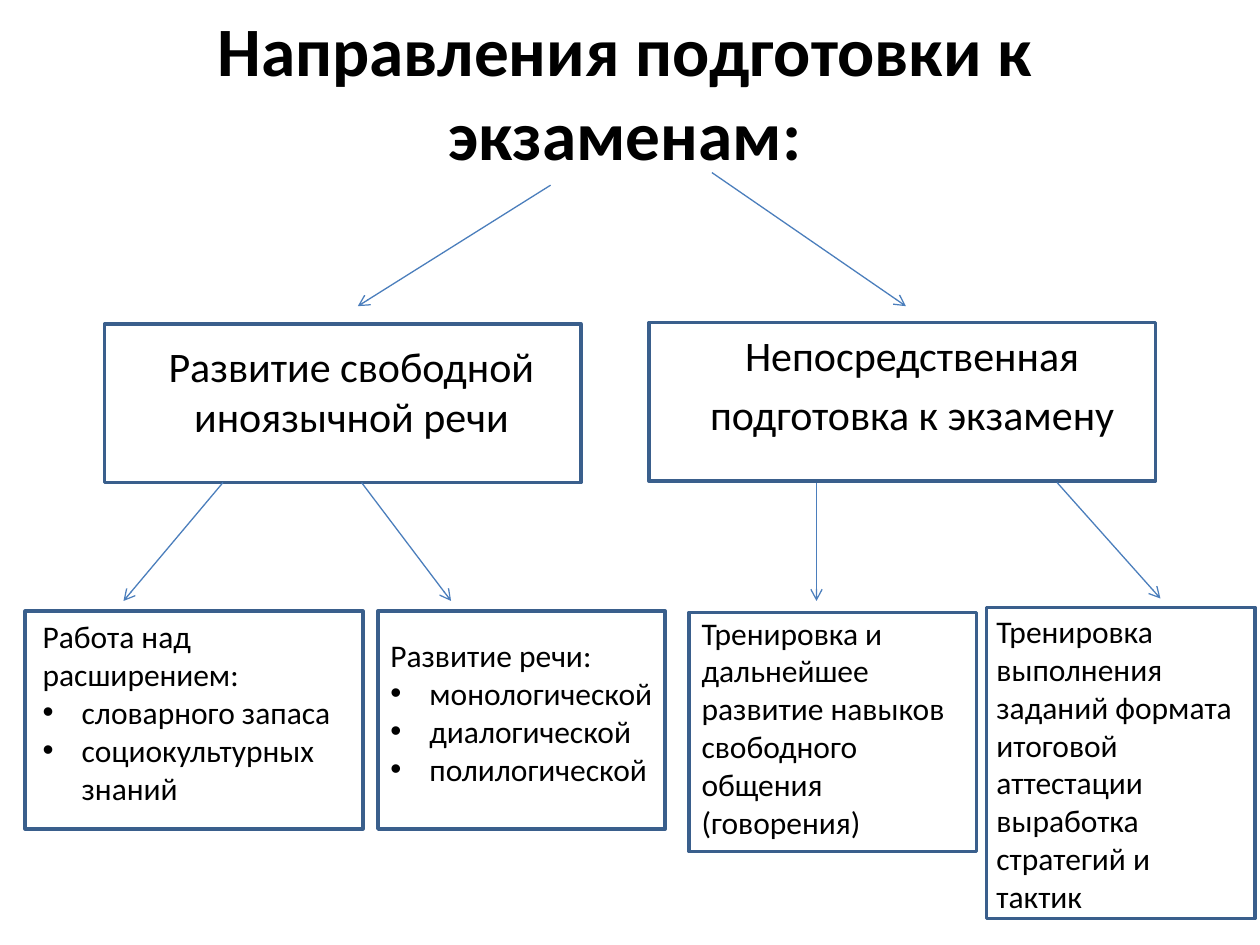
import pptx
import pptx.util
import pptx.dml.color
import pptx.enum.shapes
import pptx.enum.text
import pptx.oxml.ns
import lxml.etree


def tint(code):
    return pptx.dml.color.RGBColor.from_string(code)


class Chart:
    """Draws a tree of boxes on a grid of 100 columns and 75 rows."""

    font, ink, edge, link = "Calibri", "000000", "3A5F8C", "4B7EBC"

    def __init__(self, deck):
        self.slide = deck.slides.add_slide(deck.slide_layouts[6])
        self.cell = deck.slide_width / 100

    def grid(self, *marks):
        return [round(mark * self.cell) for mark in marks]

    def tag(self, node, name, **attrs):
        return lxml.etree.SubElement(node, pptx.oxml.ns.qn(name), **attrs)

    def frame(self, *place):
        box = self.slide.shapes.add_shape(
            pptx.enum.shapes.MSO_SHAPE.RECTANGLE, *self.grid(*place))
        box.shadow.inherit = False
        box.fill.background()
        box.line.color.rgb = tint(self.edge)
        box.line.width = pptx.util.Pt(2)

    def arrow(self, *ends):
        line = self.slide.shapes.add_connector(
            pptx.enum.shapes.MSO_CONNECTOR.STRAIGHT, *self.grid(*ends))
        line.line.color.rgb = tint(self.link)
        line.line.width = pptx.util.Pt(0.75)
        self.tag(line.line._get_or_add_ln(), "a:tailEnd", type="arrow")
        self.tag(line._element.spPr, "a:effectLst")

    def text(self, place, lines, size=18, bold=False, mid=False, gap=0, left=0):
        box = self.slide.shapes.add_textbox(*self.grid(*place))
        body = box.text_frame
        body.word_wrap = True
        if bold:
            body.vertical_anchor = pptx.enum.text.MSO_ANCHOR.MIDDLE
        body.text = "\n".join(lines)
        for para in body.paragraphs:
            para.space_before = pptx.util.Pt(gap)
            if mid:
                para.alignment = pptx.enum.text.PP_ALIGN.CENTER
            if left:
                para._p.get_or_add_pPr().set("marL", str(self.grid(left)[0]))
            for run in para.runs:
                run.font.name = self.font
                run.font.size = pptx.util.Pt(size)
                run.font.bold = bold
                run.font.color.rgb = tint(self.ink)
        return body

    def bullets(self, place, head, items):
        body = self.text(place, [head, *items])
        step = self.grid(3.1)[0]
        for para in body.paragraphs[1:]:
            props = para._p.get_or_add_pPr()
            props.set("marL", str(step))
            props.set("indent", str(-step))
            self.tag(props, "a:buFont", typeface="Arial")
            self.tag(props, "a:buChar", char="•")


def main():
    deck = pptx.Presentation()
    deck.slide_width = pptx.util.Inches(10)
    deck.slide_height = pptx.util.Inches(7.5)
    tree = Chart(deck)

    tree.text((6.7, 1.3, 85.8, 11.8), ["Направления подготовки к экзаменам:"],
              size=39.6, bold=True, mid=True)
    tree.text((2, 26.5, 48, 11), ["Развитие свободной иноязычной речи"],
              size=24, mid=True, left=3.8)
    tree.text((48.4, 25.7, 48, 12), ["Непосредственная", "подготовка к экзамену"],
              size=24, mid=True, gap=4.8)

    for place in ((8.3, 25.7, 37.8, 12.6), (51.5, 25.6, 40.2, 12.6),
                  (2, 48.5, 26.8, 17.3), (30, 48.5, 22.8, 17.3),
                  (54.7, 48.6, 22.8, 19), (78.3, 48.2, 21.3, 24.7)):
        tree.frame(*place)

    for ends in ((43.7, 14.7, 28.4, 24.3), (56.5, 13.7, 71.9, 24.3),
                 (17.7, 38.3, 9.8, 47.7), (28.7, 38.3, 35.8, 47.7),
                 (64.8, 38.3, 64.8, 47.7), (83.9, 38.3, 92.1, 47.5)):
        tree.arrow(*ends)

    tree.bullets((2.4, 48.5, 26, 16.2), "Работа над расширением:",
                 ["словарного запаса", "социокультурных знаний"])
    tree.bullets((30, 50, 23.3, 13.1), "Развитие речи:",
                 ["монологической", "диалогической", "полилогической"])
    tree.text((54.7, 48.2, 23.3, 19.2),
              ["Тренировка и дальнейшее развитие навыков свободного общения (говорения)"])
    tree.text((78.1, 48.1, 21.5, 25.2),
              ["Тренировка выполнения заданий формата итоговой аттестации",
               "выработка стратегий и тактик"])
    deck.save("out.pptx")


if __name__ == "__main__":
    main()
